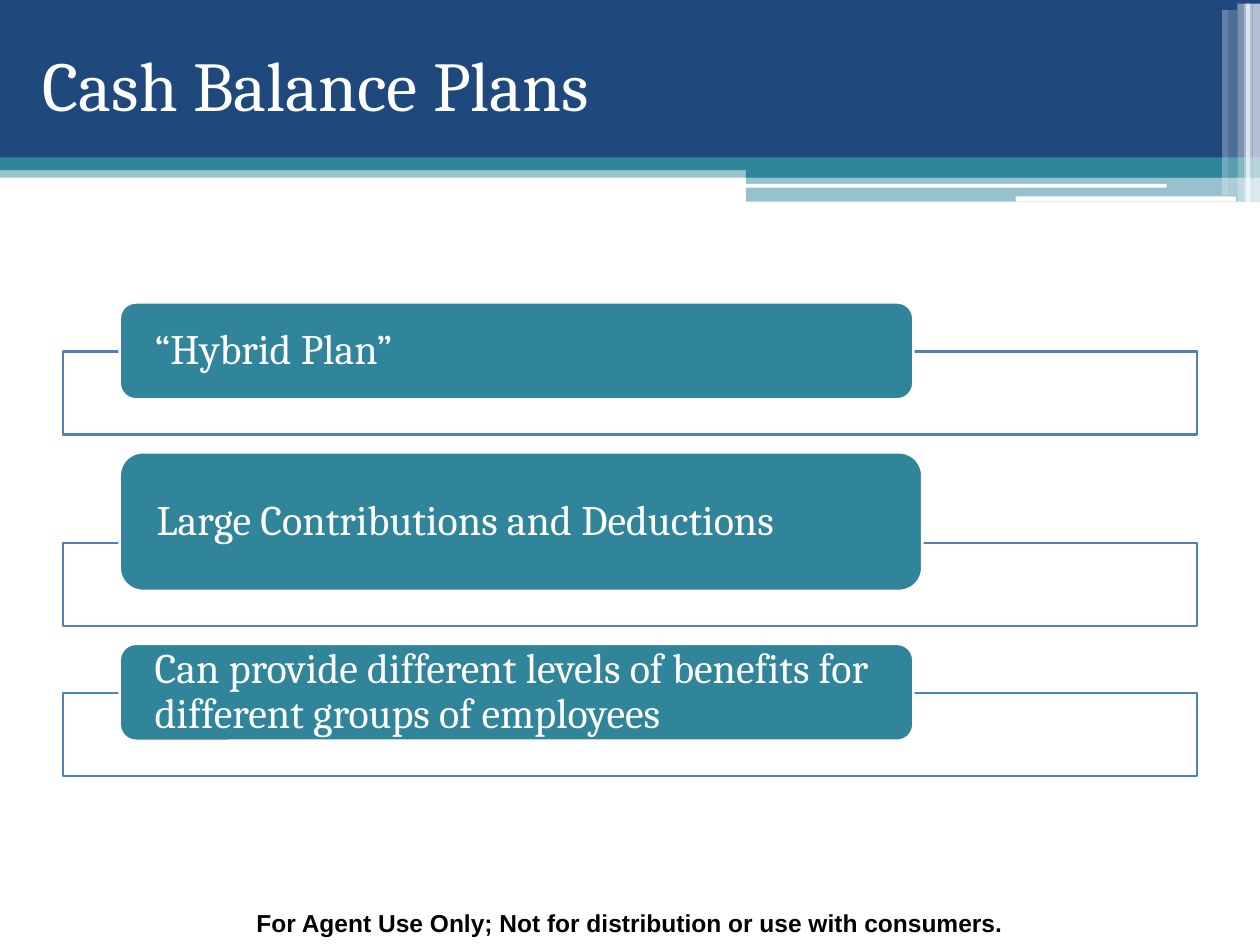
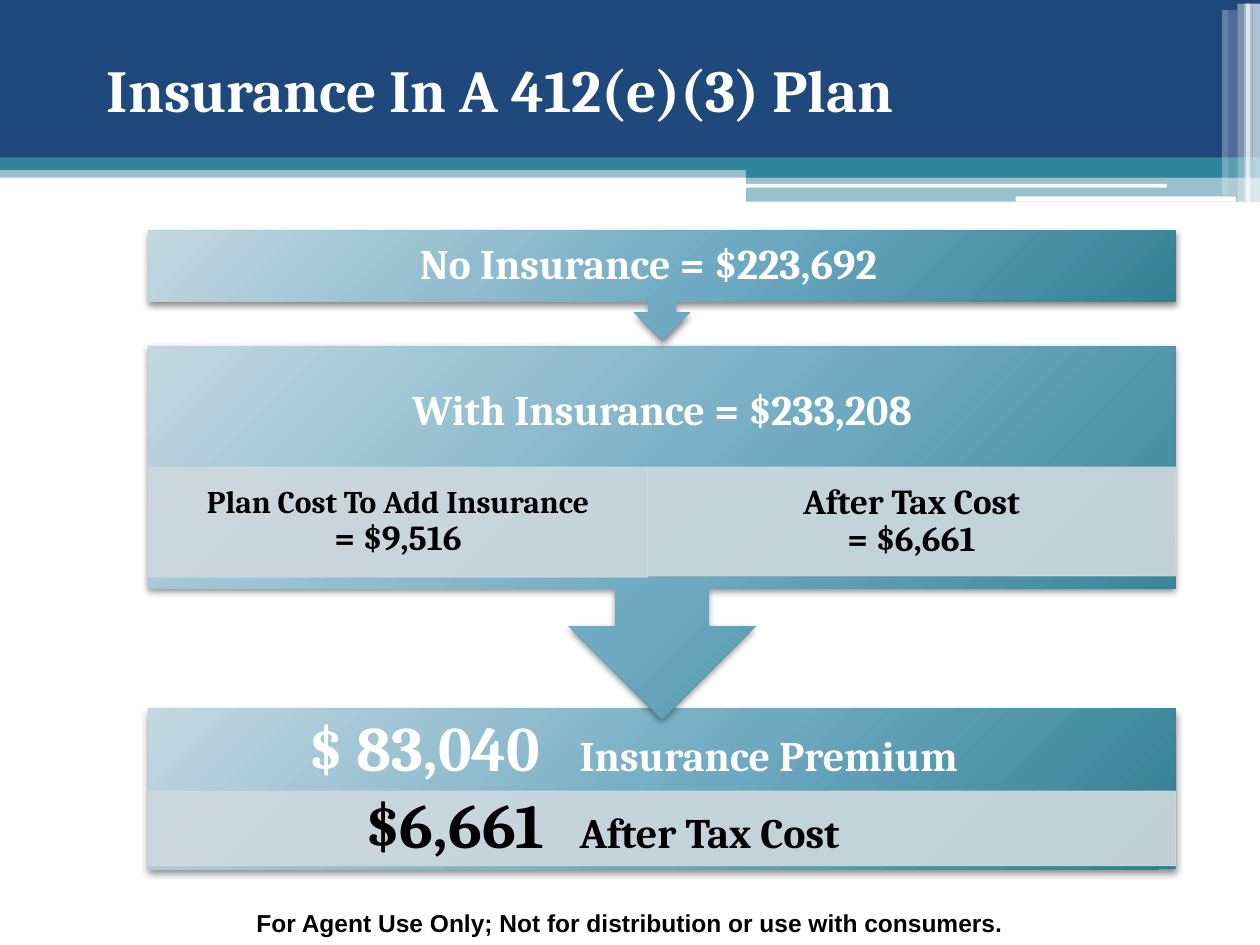
from lxml import etree
from pptx import Presentation
from pptx.dml.color import RGBColor
from pptx.enum.shapes import MSO_SHAPE
from pptx.enum.text import MSO_ANCHOR, PP_ALIGN
from pptx.oxml import parse_xml
from pptx.oxml.ns import nsdecls, qn
from pptx.util import Inches, Pt

RECT = MSO_SHAPE.RECTANGLE
ROUND = MSO_SHAPE.ROUNDED_RECTANGLE
CALL = MSO_SHAPE.DOWN_ARROW_CALLOUT
LEFT, MID = PP_ALIGN.LEFT, PP_ALIGN.CENTER
TOP, CORE = MSO_ANCHOR.TOP, MSO_ANCHOR.MIDDLE

COLS, ROWS = 100, 75
WIDE, HIGH = Inches(10), Inches(7.5)
NAVY, TEAL, WHITE, BLACK = "1F497D", "31859B", "FFFFFF", "000000"
BLUE, MIST = "4F81BD", "CED9DE"
STOPS = [(0, "C3D8E1"), (55, "6DA9C0"), (100, "2E7C90")]
FOOT = "For Agent Use Only; Not for distribution or use with consumers."


def tint(code):
    return RGBColor.from_string(code)


def fade(part, alpha):
    mark = next(part.iter(qn("a:srgbClr")))
    etree.SubElement(mark, qn("a:alpha"), val=str(alpha * 1000))


class Deck:
    def __init__(self):
        self.show = Presentation()
        self.show.slide_width, self.show.slide_height = WIDE, HIGH
        self.slide = None

    def unit(self, cells):
        return round(cells * WIDE / COLS)

    def place(self, area):
        x, y, w, h = area
        return [round(n) for n in (x * WIDE / COLS, y * HIGH / ROWS,
                                   w * WIDE / COLS, h * HIGH / ROWS)]

    def box(self, area, hue=None, alpha=100, edge=None, kind=RECT):
        shape = self.slide.shapes.add_shape(kind, *self.place(area))
        shape.shadow.inherit = False
        if hue:
            shape.fill.solid()
            shape.fill.fore_color.rgb = tint(hue)
            if alpha < 100:
                fade(shape.element.spPr.find(qn("a:solidFill")), alpha)
        if edge:
            shape.line.color.rgb = tint(edge[0])
            shape.line.width = Pt(edge[1])
        else:
            shape.line.fill.background()
        return shape

    def glow(self, area, kind=RECT):
        shape = self.box(area, kind=kind)
        shape.fill.background()
        props = shape.element.spPr
        stops = "".join(f'<a:gs pos="{at * 1000}"><a:srgbClr val="{hue}"/></a:gs>'
                        for at, hue in STOPS)
        grad = parse_xml(
            f'<a:gradFill {nsdecls("a")} rotWithShape="1"><a:gsLst>{stops}</a:gsLst>'
            '<a:path path="circle"><a:fillToRect l="-40000" t="-90000" '
            'r="140000" b="190000"/></a:path></a:gradFill>')
        props.replace(props.find(qn("a:noFill")), grad)
        cast = etree.SubElement(props.find(qn("a:effectLst")), qn("a:outerShdw"),
                                blurRad=str(Pt(4)), dist=str(Pt(2)),
                                dir="5400000", rotWithShape="0")
        etree.SubElement(cast, qn("a:srgbClr"), val=BLACK)
        fade(cast, 45)
        return shape

    def pale(self, area):
        shape = self.box(area, MIST, 90, (MIST, 0.75))
        fade(shape.element.spPr.find(qn("a:ln")), 90)
        return shape

    def fill(self, shape, runs, hue=WHITE, bold=False, face="Cambria",
             align=LEFT, anchor=CORE, pad=(1, 0.5, 1, 0.5), lead=0.9, tab=None):
        frame = shape.text_frame
        sides = ("left", "top", "right", "bottom")
        look = {f"margin_{side}": self.unit(n) for side, n in zip(sides, pad)}
        look.update(word_wrap=True, vertical_anchor=anchor)
        for key, value in look.items():
            setattr(frame, key, value)
        para = frame.paragraphs[0]
        para.alignment, para.line_spacing = align, lead
        if tab:
            tabs = etree.SubElement(para._p.get_or_add_pPr(), qn("a:tabLst"))
            etree.SubElement(tabs, qn("a:tab"), pos=str(self.unit(tab)), algn="l")
        for order, (words, size) in enumerate(runs):
            if order and not tab:
                para.add_line_break()
            run = para.add_run()
            run.text = words
            for key, value in {"size": Pt(size), "bold": bold, "name": face}.items():
                setattr(run.font, key, value)
            run.font.color.rgb = tint(hue)

    def text(self, area, runs, **look):
        self.fill(self.slide.shapes.add_textbox(*self.place(area)), runs, **look)

    def start(self, title, area, size, bold=False):
        self.slide = self.show.slides.add_slide(self.show.slide_layouts[6])
        bands = [((0, 13.2, 100, 0.9), TEAL, 50), ((0, 0, 100, 12.6), NAVY, 100),
                 ((0, 12.5, 100, 1), TEAL, 100), ((59.2, 13.1, 40.8, 1), TEAL, 100),
                 ((59.2, 14, 40.8, 2), TEAL, 50)]
        for band in bands:
            self.box(*band)
        for bar in ((59.1, 14.6, 33.5, 0.3), (80.6, 15.6, 17.5, 0.4)):
            self.box(bar, WHITE, kind=ROUND)
        rays = [(99.4, 0.6, 65), (98.9, 0.5, 65), (98.7, 0.5, 60),
                (98.2, 0.5, 40), (97.5, 0.7, 20), (97, 0.5, 30)]
        for x, wide, alpha in rays:
            y, high = (0.3, 15.7) if x > 98 else (0.8, 14.7)
            self.box((x, y, wide, high), WHITE, alpha)
        self.text((0, 71.6, 100, 3.4), [(FOOT, 14)], hue=BLACK, bold=True,
                  face="Arial", align=MID, anchor=TOP, lead=1)
        self.text(area, [(title, size)], bold=bold, lead=1)


def plans(deck):
    deck.start("Cash Balance Plans", (2.4, 0.8, 90, 11.7), 40)
    points = [("“Hybrid Plan”", 63, 7.7),
              ("Large Contributions and Deductions", 63.7, 11),
              ("Can provide different levels of benefits for "
               "different groups of employees", 63, 7.7)]
    lap, panel, gap = 3.8, 6.6, 1.4
    y = 24
    for words, wide, high in points:
        base = y + high - lap
        deck.box((5, base, 90, panel), WHITE, 90, (BLUE, 1.5))
        pill = deck.box((9.5, y, wide, high), TEAL, edge=(WHITE, 1.5), kind=ROUND)
        deck.fill(pill, [(words, 24)], pad=(2.4, 0, 2.4, 0))
        y = base + panel + gap


def costs(deck):
    deck.start("Insurance In A 412(e)(3) Plan", (7.5, 0.8, 76.8, 12.5), 34, True)
    x, wide, split, stop = 11.8, 81.5, 39.6, 34.2
    last = deck.glow((x, 56.2, wide, 12.8))
    strip = deck.pale((x, 62.8, wide, 5.9))
    sums = [(last, "$ 83,040", "Insurance Premium", WHITE, 12.7, 5.9),
            (strip, "$6,661", "After Tax Cost", BLACK, 17.2, 0)]
    for shape, cash, label, hue, inset, below in sums:
        deck.fill(shape, [(cash, 36), ("\t" + label, 24)], hue=hue, bold=True,
                  pad=(inset, 0, 0, below), tab=stop - inset)
    steps = [(27.5, 29.6, "With Insurance = $233,208", (1.9, 1.9, 1.9, 10.7)),
             (18.3, 8.7, "No Insurance = $223,692", (1.9, 0, 4.1, 0))]
    for y, high, words, pad in steps:
        shape = deck.glow((x, y, wide, high), CALL)
        deck.fill(shape, [(words, 24)], bold=True, align=MID, pad=pad)
    parts = [(x, split, 8.7, "Plan Cost To Add Insurance", 18, "= $9,516"),
             (x + split, wide - split, 8.6, "After Tax Cost", 20, "= $6,661")]
    for left, span, high, label, size, cash in parts:
        deck.fill(deck.pale((left, 37.1, span, high)), [(label, size), (cash, 20)],
                  hue=BLACK, bold=True, align=MID, pad=(1.5, 0.3, 1.5, 0.3))


def main():
    deck = Deck()
    plans(deck)
    costs(deck)
    deck.show.save("out.pptx")


if __name__ == "__main__":
    main()
